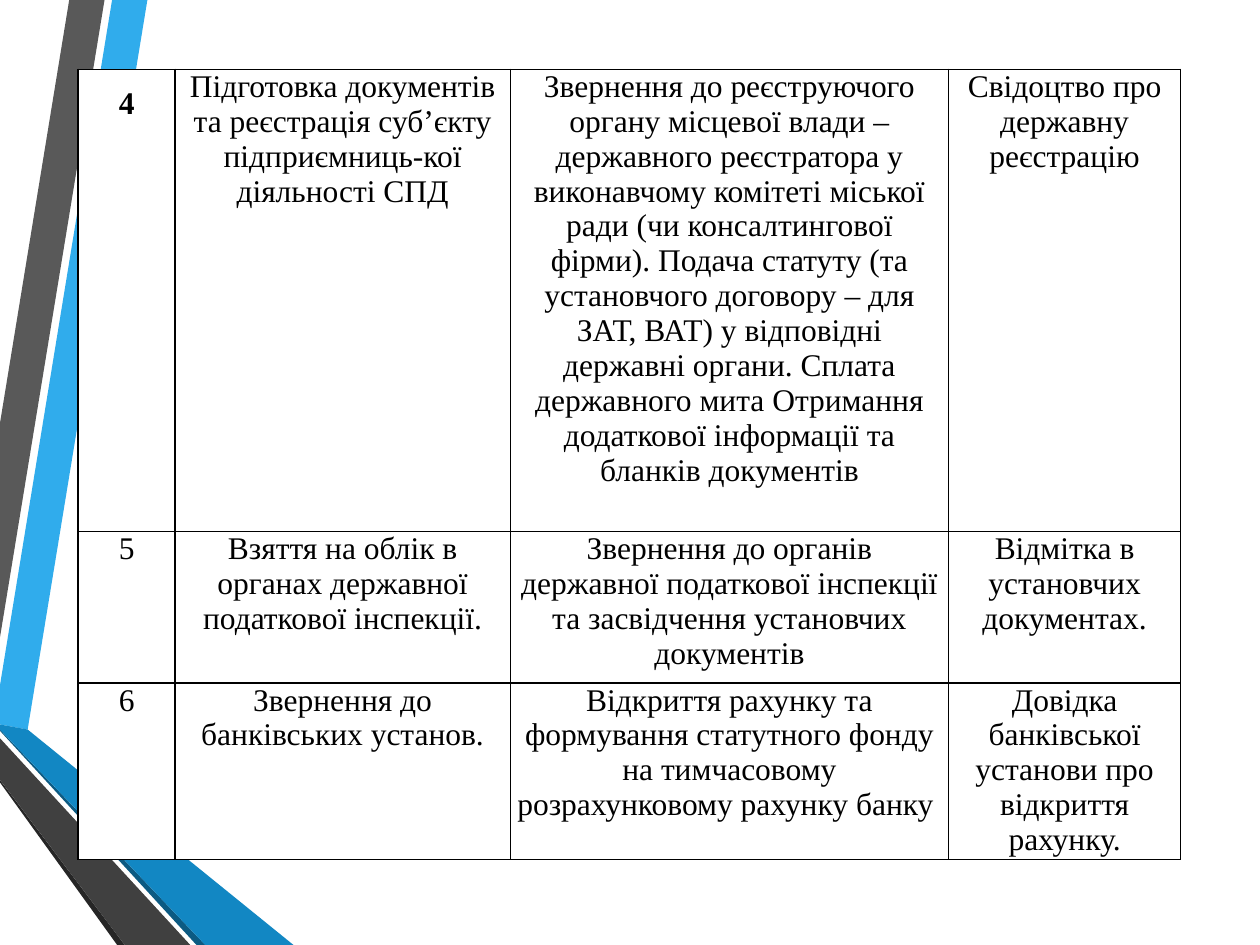
from lxml import etree
from pptx import Presentation, util as u
from pptx.dml.color import RGBColor
from pptx.enum import text
from pptx.oxml import ns

BLACK = RGBColor(0x00, 0x00, 0x00)
WHITE = RGBColor(0xFF, 0xFF, 0xFF)
SKY = RGBColor(0x30, 0xAC, 0xEC)
GRAY = RGBColor(0x59, 0x59, 0x59)
COAL = RGBColor(0x26, 0x26, 0x26)
NAVY = RGBColor(0x0C, 0x5A, 0x82)
BLUE = RGBColor(0x12, 0x87, 0xC3)
GRAPHITE = RGBColor(0x40, 0x40, 0x40)

RIBBONS = [
    (SKY, [(0, 5.44), (0, 5.75), (0.22, 5.79), (1.17, 0), (0.89, 0)]),
    (GRAY, [(0.83, 0), (0.55, 0), (0, 3.36), (0, 5.06)]),
    (COAL, [(0, 6.19), (0, 6.21), (0.93, 7.5), (0.99, 7.5)]),
    (NAVY, [(0, 5.79), (0, 5.8), (1.56, 7.5), (1.63, 7.5)]),
    (BLUE, [(0, 5.79), (1.63, 7.5), (2.33, 7.5), (0.22, 5.79), (0, 5.75)]),
    (GRAPHITE, [(0, 6.19), (0.99, 7.5), (1.51, 7.5), (0, 5.86)]),
]

STEPS = [
    ("4",
     "Підготовка документів та реєстрація суб’єкту підприємниць-кої діяльності СПД",
     "Звернення до реєструючого органу місцевої влади – державного реєстратора у "
     "виконавчому комітеті міської ради (чи консалтингової фірми). Подача статуту (та "
     "установчого договору – для ЗАТ, ВАТ) у відповідні державні органи. Сплата "
     "державного мита Отримання додаткової інформації та бланків документів",
     "Свідоцтво про державну реєстрацію"),
    ("5",
     "Взяття на облік в органах державної податкової інспекції.",
     "Звернення до органів державної податкової інспекції та засвідчення установчих документів",
     "Відмітка в установчих документах."),
    ("6",
     "Звернення до банківських установ.",
     "Відкриття рахунку та формування статутного фонду на тимчасовому розрахунковому рахунку банку ",
     "Довідка банківської установи про відкриття рахунку."),
]
COLUMN_WIDTHS = [0.77, 2.66, 3.48, 1.84]
ROW_HEIGHTS = [3.67, 1.2, 1.4]
LEFT, TOP = 0.62, 0.55


def add_ribbon(page, color, points):
    corners = [(u.Inches(x), u.Inches(y)) for x, y in points]
    builder = page.shapes.build_freeform(*corners[0])
    builder.add_line_segments(corners[1:], close=True)
    ribbon = builder.convert_to_shape()
    ribbon.shadow.inherit = False
    ribbon.fill.solid()
    ribbon.fill.fore_color.rgb = color
    ribbon.line.fill.background()


def add_borders(cell):
    properties = cell._tc.get_or_add_tcPr()
    for index, side in enumerate(("lnL", "lnR", "lnT", "lnB")):
        line = etree.Element(ns.qn("a:" + side), w=str(u.Pt(1)))
        fill = etree.SubElement(line, ns.qn("a:solidFill"))
        etree.SubElement(fill, ns.qn("a:srgbClr"), val=str(BLACK))
        properties.insert(index, line)


def fill_cell(cell, words):
    cell.margin_left = cell.margin_right = u.Inches(0.05)
    cell.margin_top = cell.margin_bottom = 0
    cell.fill.solid()
    cell.fill.fore_color.rgb = WHITE
    add_borders(cell)
    cell.text = words
    para = cell.text_frame.paragraphs[0]
    para.alignment = text.PP_ALIGN.CENTER
    para.font.name = "Times New Roman"
    para.font.size = u.Pt(18)
    para.font.bold = False
    para.font.color.rgb = BLACK
    return para


def add_steps(page):
    frame = page.shapes.add_table(
        len(STEPS), len(COLUMN_WIDTHS), u.Inches(LEFT), u.Inches(TOP),
        u.Inches(sum(COLUMN_WIDTHS)), u.Inches(sum(ROW_HEIGHTS)))
    table = frame.table
    table.first_row = table.horz_banding = False
    for column, width in zip(table.columns, COLUMN_WIDTHS):
        column.width = u.Inches(width)
    for row, height, step in zip(table.rows, ROW_HEIGHTS, STEPS):
        row.height = u.Inches(height)
        for cell, words in zip(row.cells, step):
            fill_cell(cell, words)
    first_number = table.cell(0, 0).text_frame.paragraphs[0]
    first_number.font.bold = True
    first_number.line_spacing = 1.5


def main():
    deck = Presentation()
    deck.slide_width, deck.slide_height = u.Inches(10), u.Inches(7.5)
    page = deck.slides.add_slide(deck.slide_layouts[6])
    for color, points in RIBBONS:
        add_ribbon(page, color, points)
    add_steps(page)
    deck.save("out.pptx")


if __name__ == "__main__":
    main()
